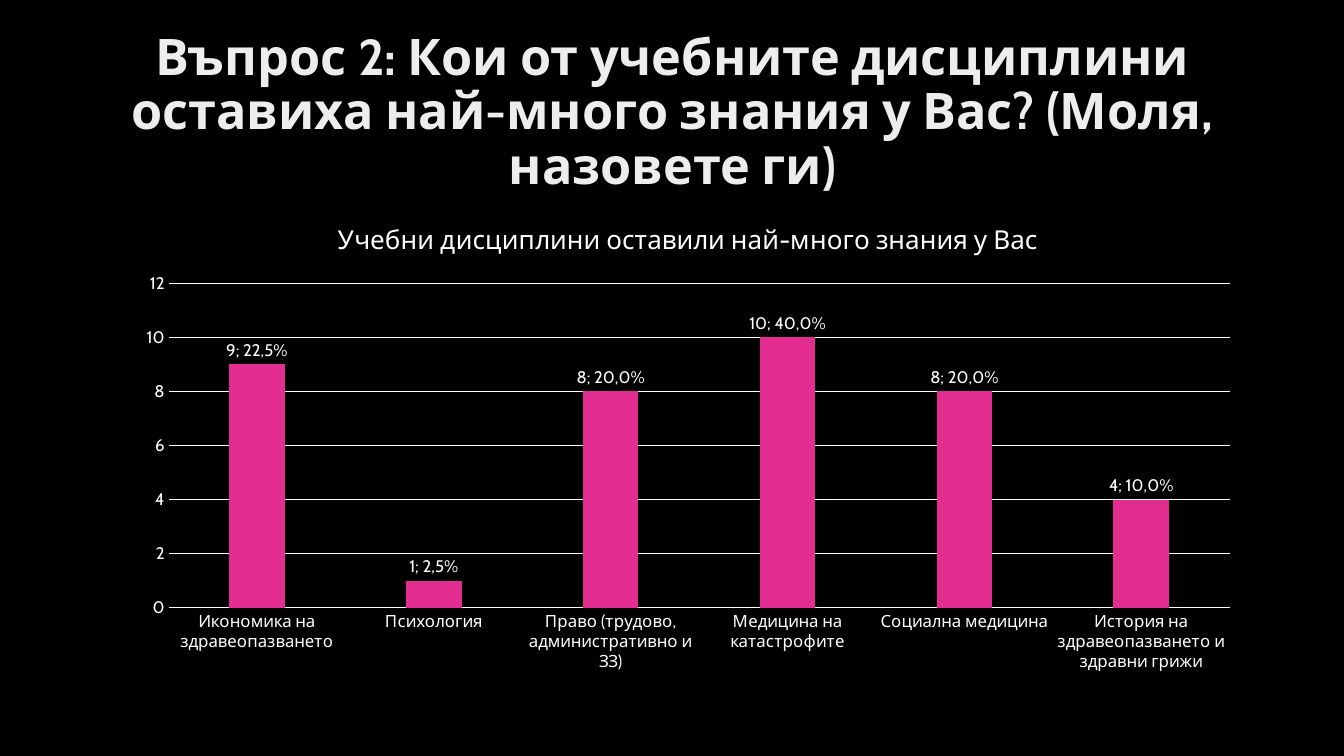
from pptx import Presentation
from pptx.chart.data import CategoryChartData
from pptx.dml.color import RGBColor
from pptx.enum.chart import XL_CHART_TYPE, XL_LABEL_POSITION, XL_TICK_MARK
from pptx.enum.text import MSO_ANCHOR, PP_ALIGN
from pptx.util import Inches, Pt

TITLE = "Въпрос 2: Кои от учебните дисциплини оставиха най-много знания у Вас? (Моля, назовете ги)"
CHART_TITLE = "Учебни дисциплини оставили най-много знания у Вас"
SUBJECTS = [
    ("Икономика на здравеопазването", 9, "22,5%"),
    ("Психология", 1, "2,5%"),
    ("Право (трудово, административно и ЗЗ)", 8, "20,0%"),
    ("Медицина на катастрофите", 10, "40,0%"),
    ("Социална медицина", 8, "20,0%"),
    ("История на здравеопазването и здравни грижи", 4, "10,0%"),
]
THEME = {
    "font": "Cabin",
    "background": RGBColor(0x00, 0x00, 0x00),
    "title": RGBColor(0xED, 0xED, 0xED),
    "text": RGBColor(0xFF, 0xFF, 0xFF),
    "bar": RGBColor(0xE3, 0x2D, 0x91),
    "title_size": 36,
    "chart_title_size": 18.6,
    "chart_size": 10,
    "label_size": 12,
    "line_width": 0.75,
}


def style_font(font, size, color=THEME["text"], bold=False):
    font.name = THEME["font"]
    font.size = Pt(size)
    font.bold = bold
    font.color.rgb = color


def style_line(line):
    line.color.rgb = THEME["text"]
    line.width = Pt(THEME["line_width"])


def add_title(slide):
    box = slide.shapes.add_textbox(Inches(0.92), Inches(0.4), Inches(11.5), Inches(1.45))
    tf = box.text_frame
    tf.word_wrap = True
    tf.vertical_anchor = MSO_ANCHOR.MIDDLE
    p = tf.paragraphs[0]
    p.text = TITLE
    p.alignment = PP_ALIGN.CENTER
    p.line_spacing = 0.9
    style_font(p.font, THEME["title_size"], THEME["title"], True)


def add_subject_chart(slide):
    data = CategoryChartData()
    data.categories = [name for name, _, _ in SUBJECTS]
    data.add_series(CHART_TITLE, [count for _, count, _ in SUBJECTS])
    chart = slide.shapes.add_chart(
        XL_CHART_TYPE.COLUMN_CLUSTERED,
        Inches(1.23), Inches(2), Inches(11.19), Inches(4.76), data,
    ).chart
    style_font(chart.font, THEME["chart_size"])
    chart.has_legend = False
    chart.has_title = True
    chart.chart_title.include_in_layout = False
    p = chart.chart_title.text_frame.paragraphs[0]
    p.text = CHART_TITLE
    style_font(p.font, THEME["chart_title_size"])

    for axis in (chart.category_axis, chart.value_axis):
        axis.major_tick_mark = axis.minor_tick_mark = XL_TICK_MARK.NONE
        style_font(axis.tick_labels.font, THEME["label_size"])
    style_line(chart.category_axis.format.line)
    chart.value_axis.format.line.fill.background()
    chart.value_axis.has_major_gridlines = True
    style_line(chart.value_axis.major_gridlines.format.line)
    chart.value_axis.minimum_scale = 0
    chart.value_axis.maximum_scale = 12
    chart.value_axis.major_unit = 2

    plot = chart.plots[0]
    plot.vary_by_categories = False
    plot.gap_width = 219
    plot.overlap = -27
    series = plot.series[0]
    series.format.fill.solid()
    series.format.fill.fore_color.rgb = THEME["bar"]
    labels = series.data_labels
    labels.show_value = True
    labels.position = XL_LABEL_POSITION.OUTSIDE_END
    style_font(labels.font, THEME["label_size"])
    for i, (_, count, share) in enumerate(SUBJECTS):
        label = series.points[i].data_label
        p = label.text_frame.paragraphs[0]
        r = p.add_run()
        r.text = f"{count}; {share}"
        style_font(r.font, THEME["label_size"])
        label.position = XL_LABEL_POSITION.OUTSIDE_END


def main():
    prs = Presentation()
    prs.slide_width, prs.slide_height = Inches(13.33), Inches(7.5)
    s = prs.slides.add_slide(prs.slide_layouts[6])
    s.background.fill.solid()
    s.background.fill.fore_color.rgb = THEME["background"]
    add_title(s)
    add_subject_chart(s)
    prs.save("out.pptx")


if __name__ == "__main__":
    main()
